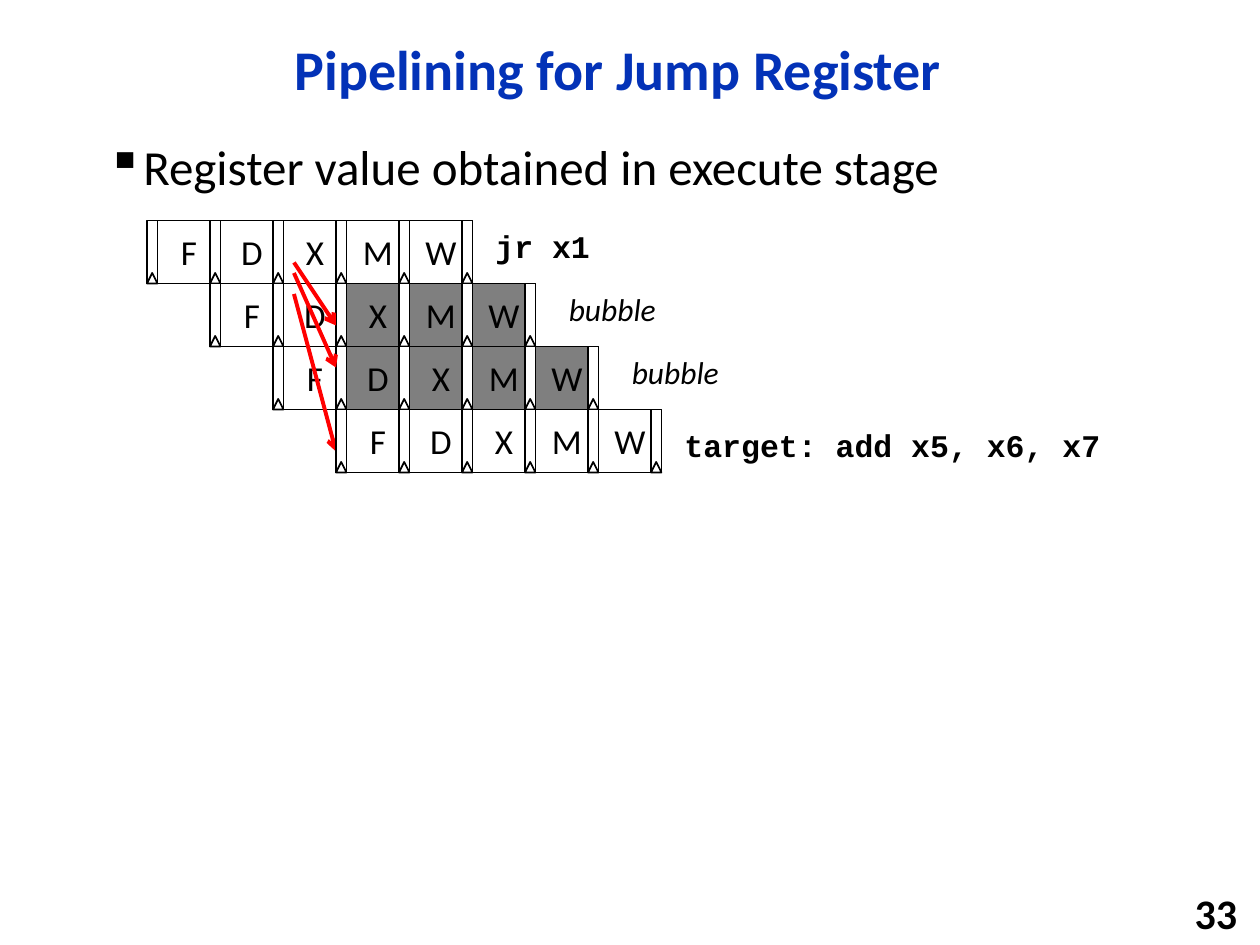
from typing import NamedTuple

from lxml.etree import SubElement
from pptx import Presentation
from pptx.dml.color import RGBColor
from pptx.enum.shapes import MSO_CONNECTOR, MSO_SHAPE
from pptx.enum.text import MSO_ANCHOR, PP_ALIGN
from pptx.oxml.ns import qn
from pptx.util import Emu, Pt

PX = 9525  # EMU per px, 96 px to the inch
BLACK = RGBColor(0x00, 0x00, 0x00)
WHITE = RGBColor(0xFF, 0xFF, 0xFF)
GREY = RGBColor(0x7F, 0x7F, 0x7F)
BLUE = RGBColor(0x03, 0x32, 0xB7)
RED = RGBColor(0xFF, 0x00, 0x00)

STAGES = "FDXMW"
CELL, LATCH = 48, 8
LEFT, TOP = 120, 168

STAGE_FONT = dict(name="Calibri", size=Pt(20))
CODE_FONT = dict(name="Courier New", size=Pt(18), bold=True)
BUBBLE_FONT = dict(name="Calibri", size=Pt(18), italic=True)
TITLE_FONT = dict(name="Calibri", size=Pt(32), bold=True)
BODY_FONT = dict(name="Calibri", size=Pt(28))
NUMBER_FONT = dict(name="Calibri", size=Pt(24), bold=True)


class Instruction(NamedTuple):
    label: str
    font: dict
    dx: int  # label offset from the end of the row
    dy: int = 0
    squashed_from: int = len(STAGES)  # first stage turned into a bubble


class Arrow(NamedTuple):
    y1: int
    y2: int
    x1: int = 224
    x2: int = 256


INSTRUCTIONS = [
    Instruction("jr x1", CODE_FONT, 8),
    Instruction("bubble", BUBBLE_FONT, 16, squashed_from=2),
    Instruction("bubble", BUBBLE_FONT, 16, squashed_from=1),
    Instruction("target: add x5, x6, x7", CODE_FONT, 8, 8),
]
ARROWS = [Arrow(208, 280), Arrow(200, 248), Arrow(224, 344)]


def emu(*lengths: int) -> list[Emu]:
    return [Emu(v * PX) for v in lengths]


def write(sp, text: str, font: dict, color=BLACK, align=PP_ALIGN.LEFT,
          anchor=MSO_ANCHOR.TOP, wrap=True, line_spacing=1.0):
    tf = sp.text_frame
    tf.word_wrap, tf.vertical_anchor = wrap, anchor
    p = tf.paragraphs[0]
    p.alignment, p.line_spacing = align, line_spacing
    r = p.add_run()
    r.text = text
    for key, value in font.items():
        setattr(r.font, key, value)
    r.font.color.rgb = color
    return p


def add_text(s, box: tuple[int, int, int, int], text: str, font: dict, **layout):
    return write(s.shapes.add_textbox(*emu(*box)), text, font, **layout)


def add_bullet(p, char: str, indent: int) -> None:
    pPr = p._p.get_or_add_pPr()
    pPr.set("marL", str(indent * PX))
    pPr.set("indent", str(-indent * PX))
    SubElement(pPr, qn("a:buChar"), char=char)


def add_outlined(s, kind, x: int, y: int, w: int, h: int, fill=WHITE):
    sp = s.shapes.add_shape(kind, *emu(x, y, w, h))
    sp.shadow.inherit = False
    sp.fill.solid()
    sp.fill.fore_color.rgb = fill
    sp.line.color.rgb = BLACK
    sp.line.width = Pt(1)
    return sp


def add_latch(s, right: int, y: int) -> None:
    """Draw a pipeline register with its clock mark, ending at x = right."""
    x = right - LATCH
    add_outlined(s, MSO_SHAPE.RECTANGLE, x, y, LATCH, CELL)
    add_outlined(s, MSO_SHAPE.ISOSCELES_TRIANGLE, x, y + CELL - LATCH, LATCH, LATCH)


def add_stage(s, x: int, y: int, name: str, fill: RGBColor) -> None:
    sp = add_outlined(s, MSO_SHAPE.RECTANGLE, x, y, CELL, CELL, fill)
    for side in ("left", "top", "right", "bottom"):
        setattr(sp.text_frame, f"margin_{side}", 0)
    write(sp, name, STAGE_FONT, align=PP_ALIGN.CENTER, anchor=MSO_ANCHOR.MIDDLE)
    add_latch(s, x + CELL, y)


def add_instruction(s, row: int, ins: Instruction) -> None:
    x, y = LEFT + row * CELL, TOP + row * CELL
    add_latch(s, x, y)
    for i, name in enumerate(STAGES):
        add_stage(s, x + i * CELL, y, name, GREY if i >= ins.squashed_from else WHITE)
    end = x + len(STAGES) * CELL
    width = 339 if len(ins.label) > 10 else 92
    add_text(s, (end + ins.dx, y + ins.dy, width, 38), ins.label, ins.font, wrap=False)


def add_arrow(s, a: Arrow) -> None:
    cx = s.shapes.add_connector(MSO_CONNECTOR.STRAIGHT, *emu(a.x1, a.y1, a.x2, a.y2))
    cx.line.color.rgb = RED
    cx.line.width = Pt(2.25)
    SubElement(cx.line._get_or_add_ln(), qn("a:tailEnd"), type="arrow")
    SubElement(cx._element.spPr, qn("a:effectLst"))


def main() -> None:
    prs = Presentation()
    prs.slide_width, prs.slide_height = emu(960, 720)
    s = prs.slides.add_slide(prs.slide_layouts[6])

    add_text(s, (88, 16, 766, 78), "Pipelining for Jump Register", TITLE_FONT, color=BLUE,
             align=PP_ALIGN.CENTER, anchor=MSO_ANCHOR.MIDDLE, line_spacing=0.9)
    p = add_text(s, (72, 104, 806, 531), "Register value obtained in execute stage",
                 BODY_FONT, line_spacing=0.9)
    add_bullet(p, "▪", 24)
    add_text(s, (752, 680, 200, 31), "33", NUMBER_FONT,
             align=PP_ALIGN.RIGHT, anchor=MSO_ANCHOR.MIDDLE)

    *fetched, target = enumerate(INSTRUCTIONS)
    for row, ins in fetched:
        add_instruction(s, row, ins)
    for arrow in ARROWS:
        add_arrow(s, arrow)
    add_instruction(s, *target)

    prs.save("out.pptx")


if __name__ == "__main__":
    main()
